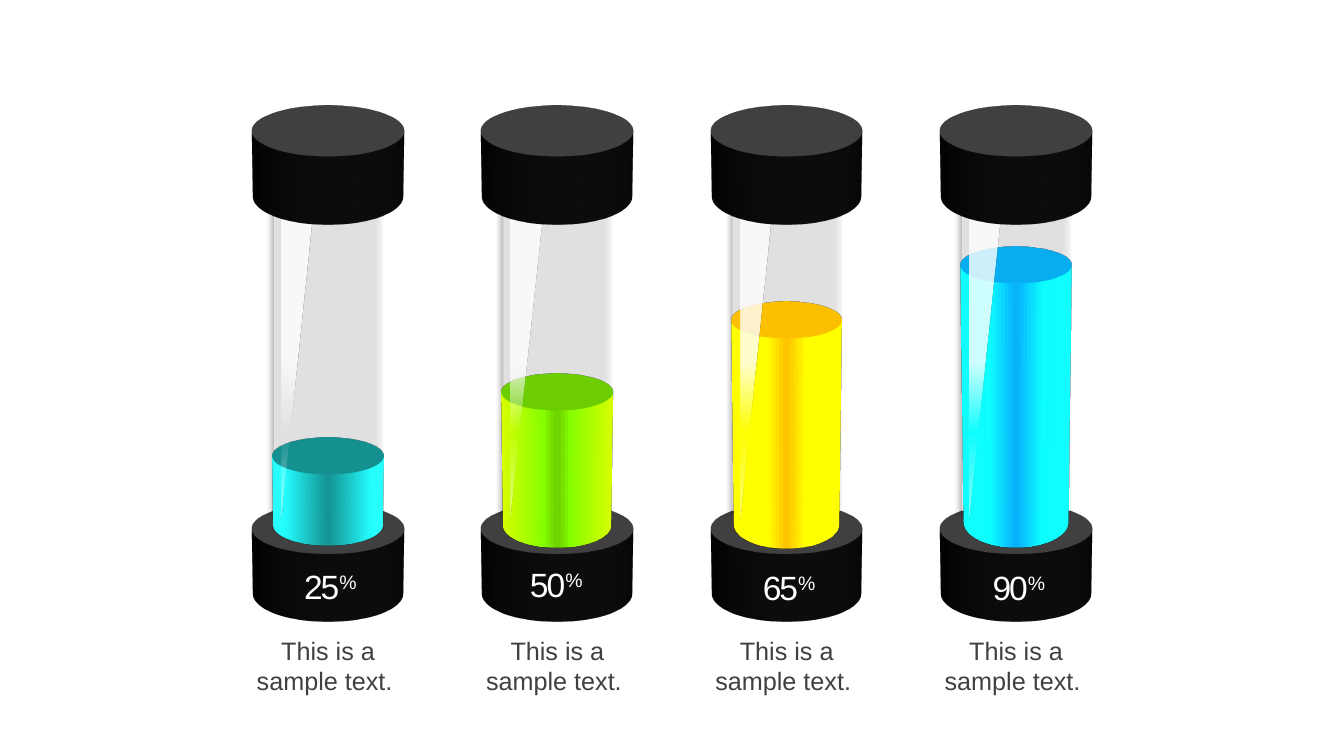
"""Build a slide of four test tubes filled to 25, 50, 65 and 90 percent."""
from lxml import etree
from pptx import Presentation
from pptx.dml.color import RGBColor
from pptx.enum.shapes import MSO_SHAPE
from pptx.enum.text import MSO_AUTO_SIZE, PP_ALIGN
from pptx.oxml.ns import qn
from pptx.util import Pt

OVAL, RECT, TRIANGLE = MSO_SHAPE.OVAL, MSO_SHAPE.RECTANGLE, MSO_SHAPE.RIGHT_TRIANGLE
FIT_SHAPE, CENTER = MSO_AUTO_SIZE.SHAPE_TO_FIT_TEXT, PP_ALIGN.CENTER

WHITE = RGBColor(0xFF, 0xFF, 0xFF)
BLACK = RGBColor(0x00, 0x00, 0x00)
CAP = RGBColor(0x40, 0x40, 0x40)
CAP_SIDE = RGBColor(0x1A, 0x1A, 0x1A)
GLASS = RGBColor(0xF2, 0xF2, 0xF2)
TEAL = RGBColor(0x15, 0x91, 0x92)
GREEN = RGBColor(0x6D, 0xCF, 0x00)
AMBER = RGBColor(0xFC, 0xC0, 0x00)
BLUE = RGBColor(0x09, 0xAE, 0xF2)

FIRST_CENTER, PITCH = 234.2, 163.8
LID_TOP, BASE_TOP = 38.9, 322.6
CAP_SIZE, CAP_DEPTH, FLUID_SIZE = 108, 50, 79.2
SHINE_STOPS = [(50, 80), (72, 0), (100, 50)]

TUBES = [
    ("25", TEAL, 285.8, 53, 210.2, 401),
    ("50", GREEN, 239.8, 104, 371.5, 399.6),
    ("65", AMBER, 188.6, 162, 537.8, 401.4),
    ("90", BLUE, 149, 207, 702, 401.4),
]

prs = Presentation()
prs.slide_width, prs.slide_height = Pt(960), Pt(540)
slide = prs.slides.add_slide(prs.slide_layouts[6])
shapes = slide.shapes


def add_plain(preset, left, top, width, height, color):
    """Add a filled preset shape without outline or shadow."""
    shape = shapes.add_shape(preset, Pt(left), Pt(top), Pt(width), Pt(height))
    shape.fill.solid()
    shape.fill.fore_color.rgb = color
    shape.line.fill.background()
    shape.shadow.inherit = False
    return shape


def add_cylinder(center, top, size, depth, color, side_color, rig):
    """Add a disc tilted backwards and extruded downwards."""
    disc = add_plain(OVAL, center - size / 2, top, size, size, color)
    properties = disc._element.spPr
    scene = etree.SubElement(properties, qn("a:scene3d"))
    camera = etree.SubElement(scene, qn("a:camera"), prst="perspectiveRelaxed")
    etree.SubElement(camera, qn("a:rot"), lat="17373600", lon="0", rev="0")
    etree.SubElement(scene, qn("a:lightRig"), rig=rig, dir="t")
    solid = etree.SubElement(properties, qn("a:sp3d"), extrusionH=str(Pt(depth)),
                             prstMaterial="matte")
    extrusion = etree.SubElement(solid, qn("a:extrusionClr"))
    etree.SubElement(extrusion, qn("a:srgbClr"), val=str(side_color))


for index, (percent, fluid, level, depth, label_x, label_y) in enumerate(TUBES):
    center = FIRST_CENTER + index * PITCH
    add_cylinder(center, BASE_TOP, CAP_SIZE, CAP_DEPTH, CAP, CAP_SIDE, "threePt")

    glass = add_plain(RECT, center - 38.4, 134.6, 77, 230.4, GLASS)
    properties = glass._element.spPr
    etree.SubElement(properties.find(qn("a:solidFill"))[0], qn("a:alpha"), val="70000")
    shadow = etree.SubElement(properties.find(qn("a:effectLst")), qn("a:outerShdw"),
                              blurRad=str(Pt(4)), dist=str(Pt(3)), dir="8100000",
                              algn="tr", rotWithShape="0")
    shade = etree.SubElement(shadow, qn("a:srgbClr"), val=str(BLACK))
    etree.SubElement(shade, qn("a:alpha"), val="40000")

    add_cylinder(center, level, FLUID_SIZE, depth, fluid, fluid, "contrasting")

    shine = add_plain(TRIANGLE, center - 33.1, 146.9, 23, 224.6, WHITE)
    properties = shine._element.spPr
    properties.find(qn("a:xfrm")).set("flipV", "1")
    gradient = etree.Element(qn("a:gradFill"), rotWithShape="1")
    stop_list = etree.SubElement(gradient, qn("a:gsLst"))
    for position, opacity in SHINE_STOPS:
        stop = etree.SubElement(stop_list, qn("a:gs"), pos=str(position * 1000))
        tint = etree.SubElement(stop, qn("a:srgbClr"), val=str(WHITE))
        etree.SubElement(tint, qn("a:alpha"), val=str(opacity * 1000))
    etree.SubElement(gradient, qn("a:lin"), ang="16200000", scaled="0")
    properties.replace(properties.find(qn("a:solidFill")), gradient)

    add_cylinder(center, LID_TOP, CAP_SIZE, CAP_DEPTH, CAP, CAP_SIDE, "threePt")

    label = shapes.add_textbox(Pt(label_x), Pt(label_y), Pt(52.6), Pt(36)).text_frame
    label.word_wrap = False
    label.auto_size = FIT_SHAPE
    for piece in (percent, "%"):
        run = label.paragraphs[0].add_run()
        run.text = piece
        run.font.name, run.font.size = "Arial", Pt(24)
        run.font.color.rgb = WHITE
        run.font._element.set("spc", "-150")
    run.font._element.set("baseline", "30000")

    caption = shapes.add_textbox(Pt(center - 58.5), Pt(450.4), Pt(117.4), Pt(51)).text_frame
    caption.word_wrap = True
    caption.auto_size = FIT_SHAPE
    caption.text = "This is a sample text. "
    caption.paragraphs[0].alignment = CENTER
    font = caption.paragraphs[0].runs[0].font
    font.name, font.size = "Arial", Pt(18)
    font.color.rgb = CAP

prs.save("out.pptx")
